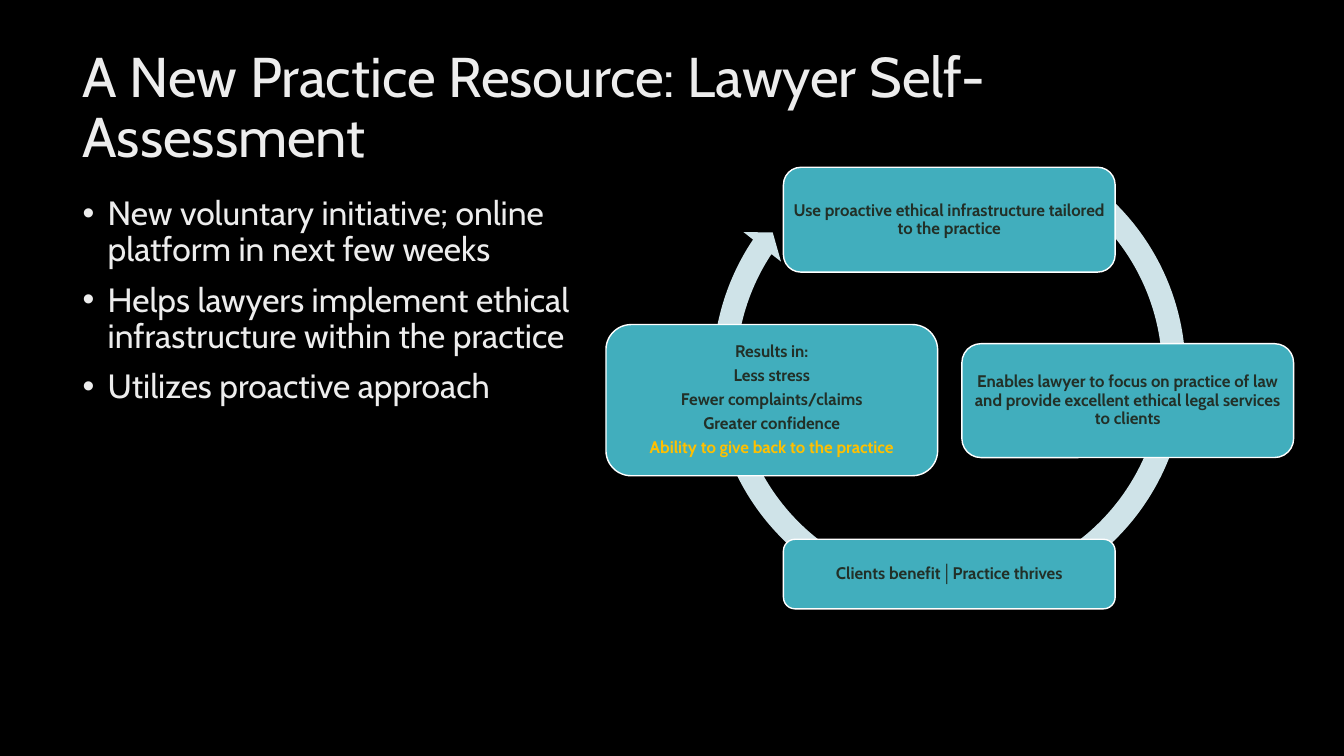
from dataclasses import dataclass

from lxml import etree
from pptx import Presentation
from pptx.dml.color import RGBColor
from pptx.enum.shapes import MSO_SHAPE
from pptx.enum.text import MSO_ANCHOR, PP_ALIGN
from pptx.oxml.ns import qn
from pptx.shapes.autoshape import Shape
from pptx.slide import Slide
from pptx.text.text import TextFrame, _Paragraph
from pptx.util import Inches, Pt

CIRCULAR_ARROW = MSO_SHAPE.CIRCULAR_ARROW
ROUNDED = MSO_SHAPE.ROUNDED_RECTANGLE
MIDDLE = MSO_ANCHOR.MIDDLE
TOP = MSO_ANCHOR.TOP
CENTER = PP_ALIGN.CENTER


@dataclass(frozen=True)
class Theme:
    background: RGBColor = RGBColor(0x00, 0x00, 0x00)
    text: RGBColor = RGBColor(0xED, 0xED, 0xED)
    card: RGBColor = RGBColor(0x41, 0xAE, 0xBD)
    card_line: RGBColor = RGBColor(0xFF, 0xFF, 0xFF)
    card_text: RGBColor = RGBColor(0x22, 0x30, 0x28)
    highlight: RGBColor = RGBColor(0xFF, 0xC0, 0x00)
    ring: RGBColor = RGBColor(0xCF, 0xE3, 0xE8)
    font: str = "Cabin"
    divider_font: str = "Times New Roman"
    title_size: float = 40
    body_size: float = 24
    card_size: float = 12


THEME = Theme()


@dataclass(frozen=True)
class Run:
    text: str
    color: RGBColor = THEME.card_text
    font: str = THEME.font


@dataclass(frozen=True)
class Card:
    left: float
    top: float
    height: float
    lines: tuple[tuple[Run, ...], ...]


CARD_WIDTH = 3.29
RING_ADJUSTMENTS = (0.047, 2.729, 128.205, 180.383, 0.048)
TITLE = "A New Practice Resource: Lawyer Self-Assessment"
BULLETS = (
    "New voluntary initiative; online platform in next few weeks",
    "Helps lawyers implement ethical infrastructure within the practice",
    "Utilizes proactive approach",
)
CARDS = (
    Card(7.77, 1.66, 1.04, (
        (Run("Use proactive ethical infrastructure tailored to the practice"),),
    )),
    Card(9.54, 3.41, 1.13, (
        (Run("Enables lawyer to focus on practice of law and provide "
             "excellent ethical legal services to clients"),),
    )),
    Card(7.77, 5.35, 0.69, (
        (Run("Clients benefit"), Run("│", font=THEME.divider_font),
         Run("Practice thrives")),
    )),
    Card(6.01, 3.22, 1.5, (
        (Run("Results in:"),),
        (Run("Less stress"),),
        (Run("Fewer complaints/claims"),),
        (Run("Greater confidence"),),
        (Run("Ability to give back to the practice", THEME.highlight),),
    )),
)


def add_run(p: _Paragraph, run: Run, size: float, bold: bool = False) -> None:
    r = p.add_run()
    r.text = run.text
    r.font.name = run.font
    r.font.size = Pt(size)
    r.font.bold = bold
    r.font.color.rgb = run.color


def next_paragraph(tf: TextFrame, index: int) -> _Paragraph:
    p = tf.add_paragraph() if index else tf.paragraphs[0]
    p.line_spacing = 0.9
    return p


def add_bullet(p: _Paragraph) -> None:
    pPr = p._p.get_or_add_pPr()
    pPr.set("marL", str(Inches(0.25)))
    pPr.set("indent", str(Inches(-0.25)))
    etree.SubElement(pPr, qn("a:buFont")).set("typeface", "Arial")
    etree.SubElement(pPr, qn("a:buChar")).set("char", "•")


def add_text(s: Slide, left: float, top: float, width: float, height: float,
             texts: tuple[str, ...], size: float, anchor: MSO_ANCHOR,
             bulleted: bool = False) -> None:
    box = s.shapes.add_textbox(
        Inches(left), Inches(top), Inches(width), Inches(height))
    tf = box.text_frame
    tf.word_wrap = True
    tf.vertical_anchor = anchor
    for i, text in enumerate(texts):
        p = next_paragraph(tf, i)
        if i:
            p.space_before = Pt(10)
        if bulleted:
            add_bullet(p)
        add_run(p, Run(text, THEME.text), size)


def add_filled(s: Slide, kind: MSO_SHAPE, left: float, top: float,
               width: float, height: float, color: RGBColor) -> Shape:
    sp = s.shapes.add_shape(
        kind, Inches(left), Inches(top), Inches(width), Inches(height))
    sp.shadow.inherit = False
    sp.fill.solid()
    sp.fill.fore_color.rgb = color
    return sp


def add_ring(s: Slide) -> None:
    sp = add_filled(s, CIRCULAR_ARROW, 6.95, 1.22, 4.93, 4.93, THEME.ring)
    sp.line.fill.background()
    for i, value in enumerate(RING_ADJUSTMENTS):
        sp.adjustments[i] = value


def add_card(s: Slide, card: Card) -> None:
    sp = add_filled(s, ROUNDED, card.left, card.top, CARD_WIDTH, card.height,
                    THEME.card)
    sp.line.color.rgb = THEME.card_line
    sp.line.width = Pt(1)
    tf = sp.text_frame
    tf.word_wrap = True
    tf.vertical_anchor = MIDDLE
    tf.margin_left = tf.margin_right = Inches(0.05)
    tf.margin_top = tf.margin_bottom = Inches(0.05)
    for i, line in enumerate(card.lines):
        p = next_paragraph(tf, i)
        p.alignment = CENTER
        p.space_after = Pt(0.35 * THEME.card_size)
        for run in line:
            add_run(p, run, THEME.card_size, bold=True)


def main() -> None:
    prs = Presentation()
    prs.slide_width = Inches(13.33)
    prs.slide_height = Inches(7.5)
    s = prs.slides.add_slide(prs.slide_layouts[6])
    s.background.fill.solid()
    s.background.fill.fore_color.rgb = THEME.background
    add_text(s, 0.72, 0.36, 11.5, 1.45, (TITLE,), THEME.title_size, MIDDLE)
    add_text(s, 0.72, 1.9, 5.08, 4.76, BULLETS, THEME.body_size, TOP,
             bulleted=True)
    add_ring(s)
    for card in CARDS:
        add_card(s, card)
    prs.save("out.pptx")


if __name__ == "__main__":
    main()
